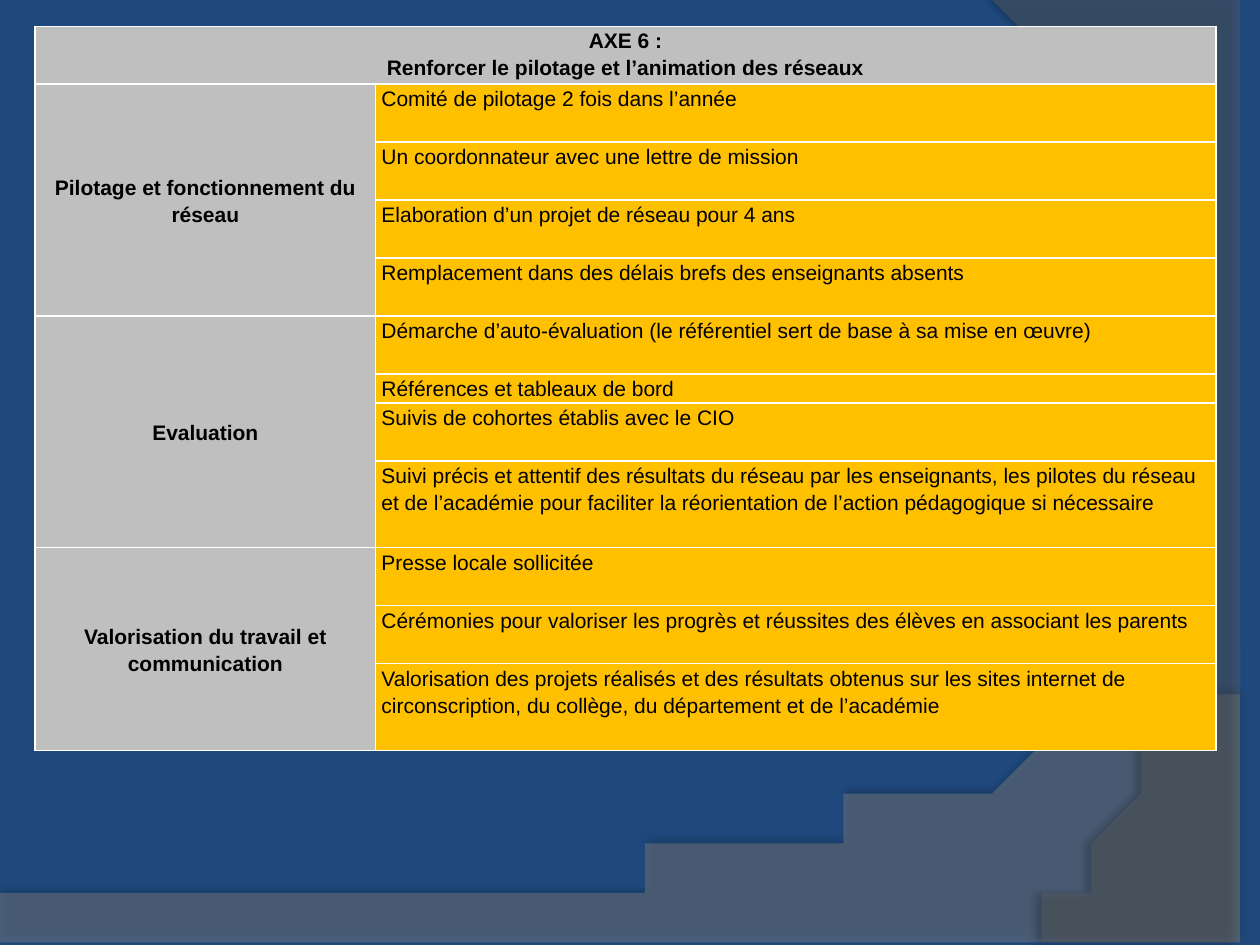
from lxml.etree import SubElement
from pptx import Presentation
from pptx.dml.color import RGBColor
from pptx.enum.text import MSO_ANCHOR, PP_ALIGN
from pptx.oxml.ns import qn
from pptx.util import Cm, Pt

BLUE, GREY, AMBER, WHITE, BLACK = "1F497D", "BFBFBF", "FFC000", "FFFFFF", "000000"

HEADING = ["AXE 6 :", "Renforcer le pilotage et l’animation des réseaux"]
# Each theme lists its actions with the row height in text lines
THEMES = [
    ("Pilotage et fonctionnement du réseau", [
        ("Comité de pilotage 2 fois dans l’année", 2),
        ("Un coordonnateur avec une lettre de mission", 2),
        ("Elaboration d’un projet de réseau pour 4 ans", 2),
        ("Remplacement dans des délais brefs des enseignants absents", 2),
    ]),
    ("Evaluation", [
        ("Démarche d’auto-évaluation (le référentiel sert de base à sa mise en œuvre)", 2),
        ("Références et tableaux de bord", 1),
        ("Suivis de cohortes établis avec le CIO", 2),
        ("Suivi précis et attentif des résultats du réseau par les enseignants, "
         "les pilotes du réseau et de l’académie pour faciliter la réorientation "
         "de l’action pédagogique si nécessaire", 3),
    ]),
    ("Valorisation du travail et communication", [
        ("Presse locale sollicitée", 2),
        ("Cérémonies pour valoriser les progrès et réussites des élèves "
         "en associant les parents", 2),
        ("Valorisation des projets réalisés et des résultats obtenus sur les sites "
         "internet de circonscription, du collège, du département et de l’académie", 3),
    ]),
]
HEADING_LINES = 2
LEFT, TOP, HEIGHT = 0.71, 0.53, 14.6
COLUMNS = [6.86, 16.94]

# Straight corners in cm, then the curve from the last corner: two controls and an end
WAVE = dict(
    corners=[(0, 17.91), (0, 19.05), (25.4, 19.05), (25.4, 13.21)],
    curve=[(14.2, 18.52), (9.93, 18.26), (0, 17.91)],
    color="7F7F7F", opacity=45, shadow_opacity=35, distance=3.5, angle=270)
BAND = dict(
    corners=[(25.4, 0.05), (25.4, 19.05), (20.85, 19.05)],
    curve=[(23.75, 15.72), (25.86, 7.62), (20.32, 0)],
    color="5E5E5E", opacity=40, shadow_opacity=45, distance=4, angle=180)
CURVE_STEPS = 40


def set_fill(fill, color):
    fill.solid()
    fill.fore_color.rgb = RGBColor.from_string(color)


def add_alpha(color_element, percent):
    SubElement(color_element, qn("a:alpha"), val=str(percent * 1000))


def bezier(p0, p1, p2, p3):
    """Return points along a cubic curve, without its start."""
    points = []
    for i in range(1, CURVE_STEPS + 1):
        t = i / CURVE_STEPS
        u = 1 - t
        points.append(tuple(u**3 * a + 3 * u * u * t * b + 3 * u * t * t * c + t**3 * d
                            for a, b, c, d in zip(p0, p1, p2, p3)))
    return points


def add_swoosh(s, corners, curve, color, opacity, shadow_opacity, distance, angle):
    points = corners + bezier(corners[-1], *curve)
    builder = s.shapes.build_freeform(*points[0], scale=Cm(1))
    builder.add_line_segments(points[1:], close=True)
    sp = builder.convert_to_shape()
    sp.line.fill.background()
    set_fill(sp.fill, color)
    sp.shadow.inherit = False
    properties = sp.element.spPr
    add_alpha(properties.find(qn("a:solidFill"))[0], opacity)
    shadow = SubElement(properties.find(qn("a:effectLst")), qn("a:outerShdw"),
                        blurRad=str(Pt(4)), dist=str(Pt(distance)),
                        dir=str(angle * 60000), algn="ctr", rotWithShape="0")
    add_alpha(SubElement(shadow, qn("a:srgbClr"), val=BLACK), shadow_opacity)


def add_borders(cell, color=WHITE, width=1):
    properties = cell._tc.get_or_add_tcPr()
    for side in ("lnL", "lnR", "lnT", "lnB"):
        line = SubElement(properties, qn(f"a:{side}"), w=str(Pt(width)))
        SubElement(SubElement(line, qn("a:solidFill")), qn("a:srgbClr"), val=color)


def write(cell, paragraphs, bold=False, align=PP_ALIGN.LEFT, anchor=MSO_ANCHOR.TOP):
    cell.vertical_anchor = anchor
    tf = cell.text_frame
    for i, text in enumerate(paragraphs):
        p = tf.add_paragraph() if i else tf.paragraphs[0]
        p.alignment = align
        p.line_spacing = 1.15
        r = p.add_run()
        r.text = text
        r.font.name = "Arial"
        r.font.size = Pt(12)
        r.font.bold = bold
        r.font.color.rgb = RGBColor.from_string(BLACK)


def add_axis_table(s):
    lines = [HEADING_LINES] + [n for _, actions in THEMES for _, n in actions]
    table = s.shapes.add_table(len(lines), len(COLUMNS), Cm(LEFT), Cm(TOP),
                               Cm(sum(COLUMNS)), Cm(HEIGHT)).table
    for column, width in zip(table.columns, COLUMNS):
        column.width = Cm(width)
    for row, n in zip(table.rows, lines):
        row.height = Cm(HEIGHT * n / sum(lines))
    for r in range(len(lines)):
        for c in range(len(COLUMNS)):
            cell = table.cell(r, c)
            cell.margin_left = cell.margin_right = Cm(0.12)
            cell.margin_top = cell.margin_bottom = 0
            add_borders(cell)
            set_fill(cell.fill, AMBER if r and c else GREY)

    table.cell(0, 0).merge(table.cell(0, 1))
    write(table.cell(0, 0), HEADING, bold=True, align=PP_ALIGN.CENTER)
    first = 1
    for theme, actions in THEMES:
        table.cell(first, 0).merge(table.cell(first + len(actions) - 1, 0))
        write(table.cell(first, 0), [theme], bold=True, align=PP_ALIGN.CENTER,
              anchor=MSO_ANCHOR.MIDDLE)
        for r, (action, _) in enumerate(actions, first):
            write(table.cell(r, 1), [action])
        first += len(actions)


def main():
    prs = Presentation()
    prs.slide_width, prs.slide_height = Cm(25.4), Cm(19.05)
    s = prs.slides.add_slide(prs.slide_layouts[6])
    set_fill(s.background.fill, BLUE)
    for swoosh in (WAVE, BAND):
        add_swoosh(s, **swoosh)
    add_axis_table(s)
    prs.save("out.pptx")


if __name__ == "__main__":
    main()
